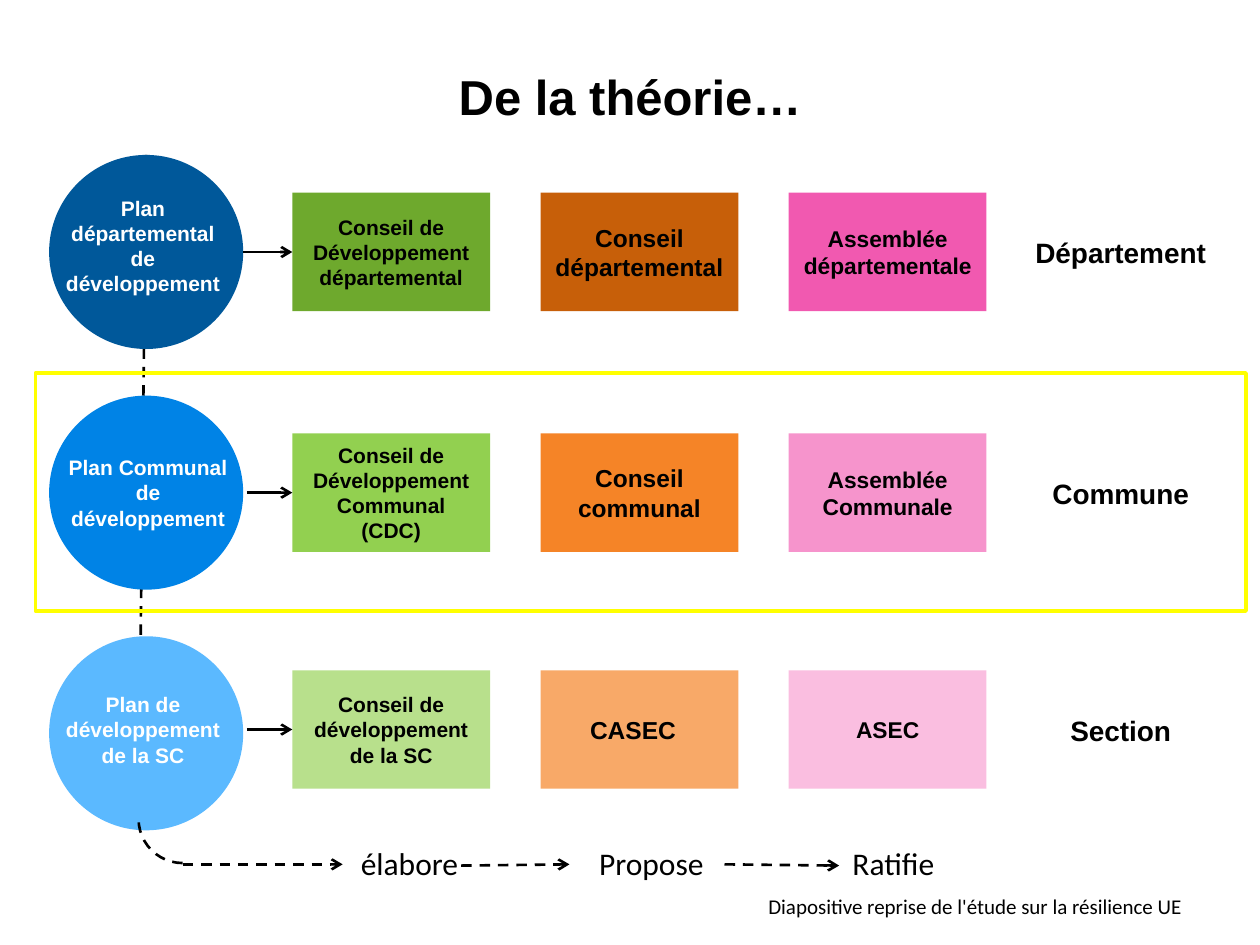
from lxml.etree import SubElement
from pptx import Presentation
from pptx.dml.color import RGBColor
from pptx.enum.dml import MSO_LINE
from pptx.enum.shapes import MSO_CONNECTOR, MSO_SHAPE
from pptx.enum.text import MSO_ANCHOR, PP_ALIGN
from pptx.oxml.ns import qn
from pptx.util import Inches, Pt

color = RGBColor.from_string


def write(shape, text, size, ink="000000", font="Arial", bold=True):
    """Fill a shape with one centred, wrapped paragraph."""
    frame = shape.text_frame
    frame.word_wrap = True
    frame.vertical_anchor = MSO_ANCHOR.MIDDLE
    frame.text = text
    para = frame.paragraphs[0]
    para.alignment = PP_ALIGN.CENTER
    para.font.size = Pt(size)
    para.font.name = font
    para.font.bold = bold
    para.font.color.rgb = color(ink)


def connect(start, end, dashed=False, arrow=True):
    line = slide.shapes.add_connector(
        MSO_CONNECTOR.STRAIGHT, *(Inches(value) for value in start + end))
    line.line.width = Pt(1.5)
    line.line.color.rgb = color("000000")
    if dashed:
        line.line.dash_style = MSO_LINE.DASH
    if arrow:
        SubElement(line.line._get_or_add_ln(), qn("a:tailEnd"), type="arrow")
    SubElement(line._element.spPr, qn("a:effectLst"))
    return line


deck = Presentation()
deck.slide_width, deck.slide_height = Inches(10), Inches(7.5)
slide = deck.slides.add_slide(deck.slide_layouts[5])
shapes = slide.shapes

title = shapes.title
title.left, title.top = Inches(0.5), Inches(0.3)
title.width, title.height = Inches(9), Inches(0.93)
write(title, "De la théorie…", 28)

# Grid: three box columns, then the level name at the right
first_column, column_step = 2.32, 1.97
box_width, box_height = 1.57, 0.94
circle_left, circle_size = 0.39, 1.54
circle_top, circle_step = 1.23, 1.91
box_sizes = (12, 14, 13)

# Row: box top, arrow start, plan (text, left, colour), boxes (text, colour), level
levels = [
    (1.53, 1.93, ("Plan départemental de développement", 0.35, "00589A"),
     [("Conseil de Développement départemental", "6EA92D"),
      ("Conseil départemental", "C75F09"),
      ("Assemblée départementale", "F159B0")], "Département"),
    (3.44, 1.96, ("Plan Communal de développement", 0.39, "0083E6"),
     [("Conseil de Développement Communal (CDC)", "92D050"),
      ("Conseil communal", "F58427"),
      ("Assemblée Communale", "F694CC")], "Commune"),
    (5.32, 1.96, ("Plan de développement de la SC", 0.35, "5BB9FF"),
     [("Conseil de développement de la SC", "B8E08C"),
      ("CASEC", "F8A968"),
      ("ASEC", "FABEE0")], "Section"),
]

# The dashed link runs behind the circles
connect((1.1, 6.5), (1.16, 1.23), dashed=True, arrow=False)

for row, (top, arrow_start, plan, boxes, level) in enumerate(levels):
    middle = top + box_height / 2

    plan_text, plan_left, plan_color = plan
    circle = shapes.add_shape(
        MSO_SHAPE.OVAL, Inches(circle_left), Inches(circle_top + row * circle_step),
        Inches(circle_size), Inches(circle_size))
    circle.shadow.inherit = False
    circle.fill.solid()
    circle.fill.fore_color.rgb = color(plan_color)
    circle.line.fill.background()
    plan_label = shapes.add_textbox(
        Inches(plan_left), Inches(middle - 0.5), Inches(box_width), Inches(0.9 if row == 0 else 1))
    write(plan_label, plan_text, 12, "FFFFFF")

    row_boxes = []
    for column, (text, fill) in enumerate(boxes):
        box = shapes.add_shape(
            MSO_SHAPE.RECTANGLE, Inches(first_column + column * column_step), Inches(top),
            Inches(box_width), Inches(box_height))
        box.shadow.inherit = False
        box.fill.solid()
        box.fill.fore_color.rgb = color(fill)
        box.line.fill.background()
        write(box, text, box_sizes[column])
        if text == "CASEC":
            box.text_frame.margin_right = Inches(0.2)
        row_boxes.append(box)

    arrow = connect((arrow_start, middle), (first_column, middle))
    arrow.end_connect(row_boxes[0], 1)

    level_label = shapes.add_textbox(
        Inches(8.11), Inches(middle - 0.18), Inches(box_width), Inches(0.37))
    write(level_label, level, 16)

# Steps along the bottom
for column, step in enumerate(["élabore", "Propose", "Ratifie"]):
    step_label = shapes.add_textbox(
        Inches(2.58 + column * 1.92), Inches(6.65), Inches(1.34), Inches(0.4))
    write(step_label, step, 18, font="Calibri", bold=False)

curve = shapes.add_shape(MSO_SHAPE.ARC, Inches(1.1), Inches(6.15), Inches(0.7), Inches(0.7))
curve.adjustments[0], curve.adjustments[1] = 54, 108  # 90 to 180 degrees
curve.shadow.inherit = False
curve.fill.background()
curve.line.color.rgb = color("000000")
curve.line.width = Pt(1.5)
curve.line.dash_style = MSO_LINE.DASH

for start, end in [((1.45, 6.86), (2.72, 6.86)),
                   ((3.66, 6.87), (4.52, 6.86)),
                   ((5.75, 6.86), (6.66, 6.87))]:
    connect(start, end, dashed=True)

credit = shapes.add_textbox(Inches(5.75), Inches(7.04), Inches(3.98), Inches(0.3))
write(credit, "Diapositive reprise de l'étude sur la résilience UE", 12, font="Calibri", bold=False)

highlight = shapes.add_shape(
    MSO_SHAPE.RECTANGLE, Inches(0.28), Inches(2.96), Inches(9.61), Inches(1.89))
highlight.shadow.inherit = False
highlight.fill.background()
highlight.line.color.rgb = color("FFFF00")
highlight.line.width = Pt(2)

deck.save("out.pptx")
